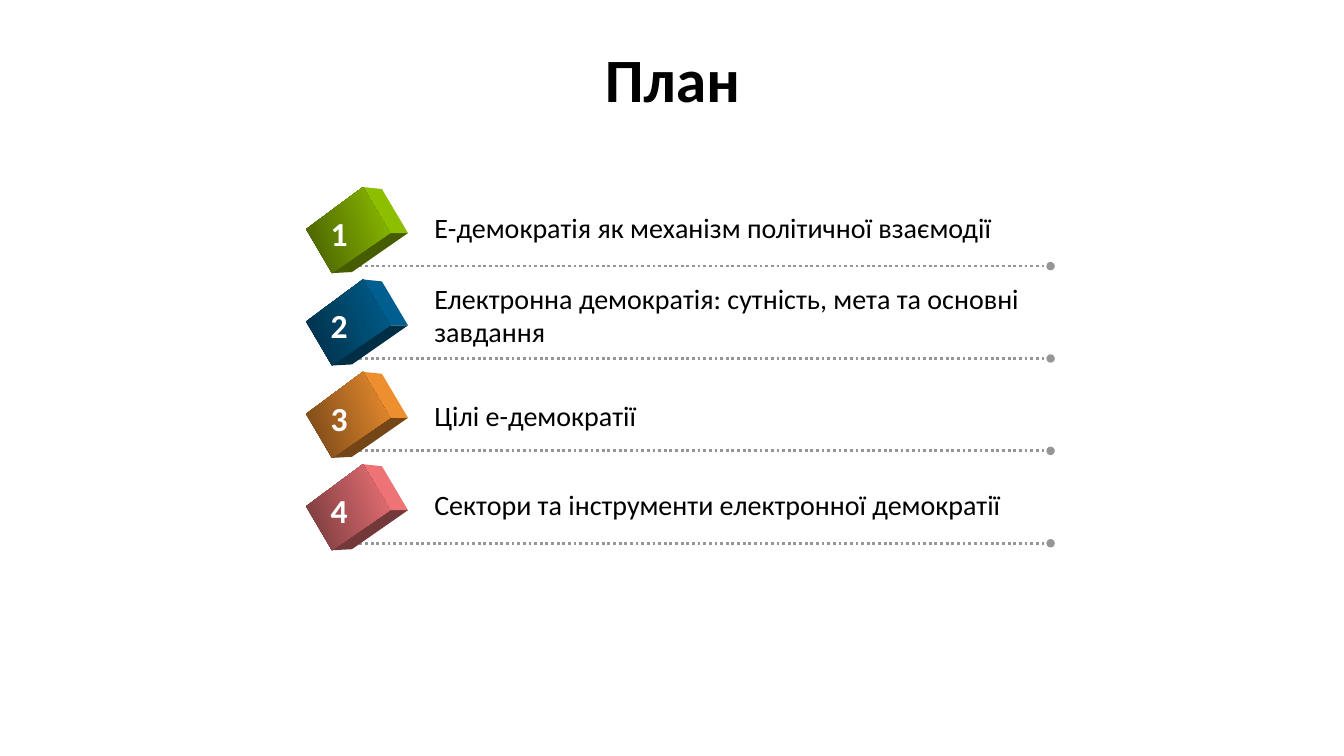
from dataclasses import dataclass

import pptx
import pptx.dml.color
import pptx.enum.dml
import pptx.enum.shapes
import pptx.enum.text
import pptx.oxml
import pptx.oxml.ns
import pptx.util

# The grid has 100 columns and 100 rows over the whole slide.
WIDE, HIGH = 13.33, 7.5
FONT = "Calibri"
FIRST, PITCH = 35.2, 12.22  # row of the first dotted line, step between lines

Point = tuple[float, float]

# Corners of the block: column, and row counted from the dotted line.
LEFT, TOP, INNER, FOOT = (22.77, -4.89), (27.01, -10.45), (29.02, -4.37), (24.7, 0.93)
BACK, TIP, HEEL = (28.42, -10.19), (30.36, -4.37), (26.19, 0.79)


@dataclass
class Item:
    text: str
    tint: str
    mid: float
    lines: int = 1


ITEMS = [
    Item("Е-демократія як механізм політичної взаємодії", "99CC00", 30.13),
    Item("Електронна демократія: сутність, мета та основні завдання", "006699", 41.67, 2),
    Item("Цілі е-демократії", "FF9933", 54.93),
    Item("Сектори та інструменти електронної демократії", "FF7C80", 66.67),
]


def col(n: float) -> int:
    return pptx.util.Inches(n * WIDE / 100)


def row(n: float) -> int:
    return pptx.util.Inches(n * HIGH / 100)


def color(code: str) -> pptx.dml.color.RGBColor:
    return pptx.dml.color.RGBColor.from_string(code)


def shade(code: str, part: float) -> str:
    """Darken a colour to the given part of its brightness."""
    return "".join(f"{round(int(code[i:i + 2], 16) * part):02X}" for i in (0, 2, 4))


def write(slide, text: str, x: float, y: float, w: float, h: float, *, size: int,
          tint: str = "000000", bold: bool = False, center: bool = False,
          space: float = 1.0) -> None:
    box = slide.shapes.add_textbox(col(x), row(y), col(w), row(h))
    frame = box.text_frame
    frame.word_wrap = True
    frame.vertical_anchor = pptx.enum.text.MSO_ANCHOR.MIDDLE
    para = frame.paragraphs[0]
    align = pptx.enum.text.PP_ALIGN
    para.alignment = align.CENTER if center else align.LEFT
    para.line_spacing = space
    run = para.add_run()
    run.text = text
    run.font.name = FONT
    run.font.size = pptx.util.Pt(size)
    run.font.bold = bold
    run.font.color.rgb = color(tint)


def rule(slide, y: float) -> None:
    """Draw a dotted line that ends in a round dot."""
    line = slide.shapes.add_connector(
        pptx.enum.shapes.MSO_CONNECTOR.STRAIGHT, col(26.33), row(y), col(78.17), row(y))
    line.line.color.rgb = color("969696")
    line.line.width = pptx.util.Pt(2)
    line.line.dash_style = pptx.enum.dml.MSO_LINE.ROUND_DOT
    space = pptx.oxml.ns.nsdecls("a")
    line.line._get_or_add_ln().append(
        pptx.oxml.parse_xml(f'<a:tailEnd {space} type="oval"/>'))
    line._element.spPr.append(pptx.oxml.parse_xml(f"<a:effectLst {space}/>"))


def face(slide, y: float, points: list[Point], start: str, end: str) -> None:
    """Draw one side of a block, shaded from start to end."""
    spots = [(col(a), row(y + b)) for a, b in points]
    pen = slide.shapes.build_freeform(*spots[0])
    pen.add_line_segments(spots[1:], close=True)
    side = pen.convert_to_shape()
    side.shadow.inherit = False
    side.line.fill.background()
    if start == end:
        side.fill.solid()
        side.fill.fore_color.rgb = color(start)
        return
    side.fill.gradient()
    side.fill.gradient_angle = 20
    for stop, tint in zip(side.fill.gradient_stops, (start, end)):
        stop.color.rgb = color(tint)


def block(slide, y: float, tint: str) -> None:
    dark, light = shade(tint, 0.45), shade(tint, 0.93)
    face(slide, y, [FOOT, INNER, TIP, HEEL], dark, dark)
    face(slide, y, [TOP, BACK, TIP, INNER], light, light)
    face(slide, y, [LEFT, TOP, INNER, FOOT], dark, light)


def main() -> None:
    deck = pptx.Presentation()
    deck.slide_width, deck.slide_height = col(100), row(100)
    slide = deck.slides.add_slide(deck.slide_layouts[6])
    write(slide, "План", 6.9, 5.33, 86.27, 11.07,
          size=44, bold=True, center=True, space=0.9)
    for i, item in enumerate(ITEMS):
        y = FIRST + i * PITCH
        rule(slide, y)
        block(slide, y, item.tint)
        write(slide, str(i + 1), 23.86, y - 7.73, 3.83, 6.67,
              size=24, tint="FFFFFF", bold=True)
        tall = 1.47 + 4.4 * item.lines
        write(slide, item.text, 31.58, item.mid - tall / 2, 48.46, tall, size=20)
    deck.save("out.pptx")


if __name__ == "__main__":
    main()
